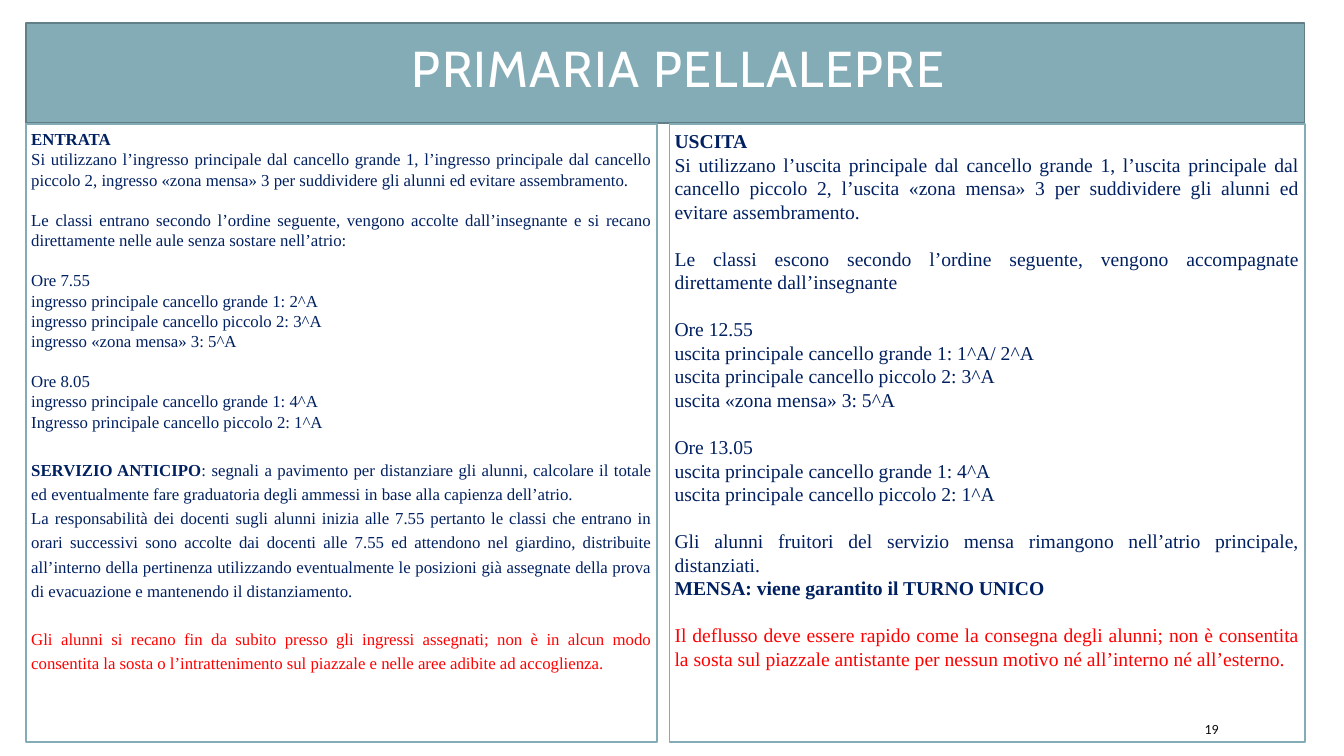
"""Build the slide on entry and exit rules for the Pellalepre primary school."""
from pptx import Presentation
from pptx.dml.color import RGBColor
from pptx.enum.text import MSO_ANCHOR, MSO_AUTO_SIZE, PP_ALIGN
from pptx.oxml.ns import qn
from pptx.util import Inches, Pt
from lxml.etree import SubElement


def rgb(value):
    return RGBColor.from_string(value)


def place(sp, left, top, width, height, fill, line):
    sp.left, sp.top, sp.width, sp.height = map(Inches, (left, top, width, height))
    sp.fill.solid()
    sp.fill.fore_color.rgb = rgb(fill)
    sp.line.color.rgb = rgb(line)
    sp.line.width = Pt(1.25)
    sp.text_frame.auto_size = MSO_AUTO_SIZE.NONE
    sp.text_frame.word_wrap = True


LEFT, RIGHT, TOP, BODY_TOP, BOTTOM = 0.26, 12.94, 0.23, 1.23, 7.36
TEAL, NAVY, RED = "84ACB6", "002060", "FF0000"

entry = [
    [("ENTRATA", ""),
     ("", "Si utilizzano l’ingresso principale dal cancello grande 1, l’ingresso principale dal cancello "
          "piccolo 2, ingresso «zona mensa» 3 per suddividere gli alunni ed evitare assembramento.")],
    [("", "Le classi entrano secondo l’ordine seguente, vengono accolte dall’insegnante e si recano "
          "direttamente nelle aule senza sostare nell’atrio:")],
    [("", "Ore 7.55"),
     ("", "ingresso principale cancello grande 1: 2^A"),
     ("", "ingresso principale cancello piccolo 2: 3^A"),
     ("", "ingresso «zona mensa» 3: 5^A")],
    [("", "Ore 8.05"),
     ("", "ingresso principale cancello grande 1: 4^A"),
     ("", "Ingresso principale cancello piccolo 2: 1^A")],
    [("SERVIZIO ANTICIPO", ": segnali a pavimento per distanziare gli alunni, calcolare il totale "
      "ed eventualmente fare graduatoria degli ammessi in base alla capienza dell’atrio."),
     ("", "La responsabilità dei docenti sugli alunni inizia alle 7.55 pertanto le classi che entrano in "
          "orari successivi sono accolte dai docenti alle 7.55 ed attendono nel giardino, distribuite "
          "all’interno della pertinenza utilizzando eventualmente le posizioni già assegnate della prova "
          "di evacuazione e mantenendo il distanziamento.")],
    [("", "Gli alunni si recano fin da subito presso gli ingressi assegnati; non è in alcun modo "
          "consentita la sosta o l’intrattenimento sul piazzale e nelle aree adibite ad accoglienza.")],
]
leaving = [
    [("USCITA", ""),
     ("", "Si utilizzano l’uscita principale dal cancello grande 1, l’uscita principale dal cancello "
          "piccolo 2, l’uscita «zona mensa» 3 per suddividere gli alunni ed evitare assembramento.")],
    [("", "Le classi escono secondo l’ordine seguente, vengono accompagnate direttamente dall’insegnante")],
    [("", "Ore 12.55"),
     ("", "uscita principale cancello grande 1: 1^A/ 2^A"),
     ("", "uscita principale cancello piccolo 2: 3^A"),
     ("", "uscita «zona mensa» 3: 5^A")],
    [("", "Ore 13.05"),
     ("", "uscita principale cancello grande 1: 4^A"),
     ("", "uscita principale cancello piccolo 2: 1^A")],
    [("", "Gli alunni fruitori del servizio mensa rimangono nell’atrio principale, distanziati."),
     ("MENSA: viene garantito il TURNO UNICO", "")],
    [("", "Il deflusso deve essere rapido come la consegna degli alunni; non è consentita la sosta "
          "sul piazzale antistante per nessun motivo né all’interno né all’esterno.")],
]

prs = Presentation()
prs.slide_width, prs.slide_height = Inches(13.33), Inches(7.5)
s = prs.slides.add_slide(prs.slide_layouts[3])
title, entry_body, leaving_body = s.placeholders

place(title, LEFT, TOP, RIGHT - LEFT, 0.99, TEAL, "627F87")
tf = title.text_frame
tf.text = "PRIMARIA PELLALEPRE"
tf.vertical_anchor = MSO_ANCHOR.MIDDLE
tf.margin_left = Inches(0.36)
p = tf.paragraphs[0]
p.alignment = PP_ALIGN.CENTER
p.line_spacing = 0.8
r = p.runs[0]
r.font.name, r.font.size = "Cabin", Pt(36)
r.font.color.rgb = rgb("FFFFFF")
r.font._element.set("spc", "100")

columns = [
    (entry_body, LEFT, 6.26, 12, entry, 4),
    (leaving_body, 6.64, 6.3, 14, leaving, len(leaving)),
]
for sp, left, width, size, groups, first_wide in columns:
    place(sp, left, BODY_TOP, width, BOTTOM - BODY_TOP, "FFFFFF", TEAL)
    tf = sp.text_frame
    tf.margin_left = tf.margin_right = tf.margin_top = tf.margin_bottom = Inches(0.05)
    for g, group in enumerate(groups):
        spacing = 1.2 if g >= first_wide else 1.0
        for i, (bold, plain) in enumerate(group):
            p = tf.paragraphs[0] if g == i == 0 else tf.add_paragraph()
            p.alignment = PP_ALIGN.JUSTIFY
            p.line_spacing = spacing
            p.space_before = Pt(size * 1.2 * spacing if g and i == 0 else 0)
            pPr = p._p.get_or_add_pPr()
            pPr.set("marL", "0")
            pPr.set("indent", "0")
            SubElement(pPr, qn("a:buNone"))
            for text, is_bold in ((bold, True), (plain, False)):
                if text:
                    r = p.add_run()
                    r.text = text
                    r.font.name, r.font.size, r.font.bold = "Times New Roman", Pt(size), is_bold
                    r.font.color.rgb = rgb(RED if group is groups[-1] else NAVY)

number = s.shapes.add_textbox(Inches(11.85), Inches(7.08), Inches(1.06), Inches(0.3))
tf = number.text_frame
tf.text = "19"
tf.word_wrap = True
tf.vertical_anchor = MSO_ANCHOR.MIDDLE
r = tf.paragraphs[0].runs[0]
r.font.name, r.font.size = "Calibri", Pt(10)
r.font.color.rgb = rgb("0D0D0D")

prs.save("out.pptx")
